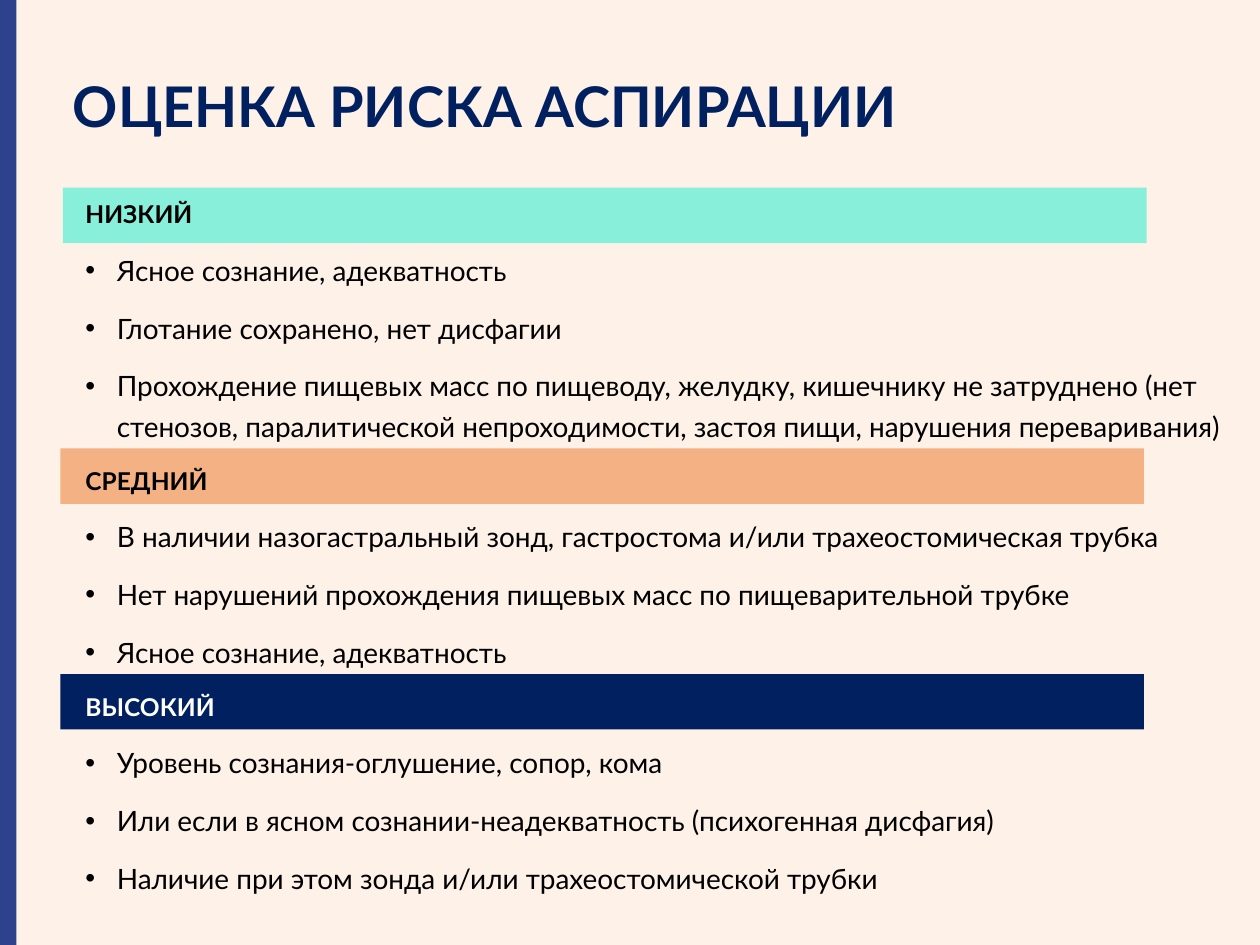
from lxml import etree
from pptx import Presentation
from pptx.dml.color import RGBColor
from pptx.enum.shapes import MSO_SHAPE
from pptx.enum.text import MSO_ANCHOR
from pptx.oxml.ns import qn
from pptx.util import Inches, Pt

RECT = MSO_SHAPE.RECTANGLE
TOP, MIDDLE = MSO_ANCHOR.TOP, MSO_ANCHOR.MIDDLE

CREAM = RGBColor(0xFE, 0xF1, 0xE8)
BLUE = RGBColor(0x2E, 0x41, 0x8D)
NAVY = RGBColor(0x00, 0x20, 0x60)
PEACH = RGBColor(0xF4, 0xB1, 0x83)
MINT = RGBColor(0x87, 0xEF, 0xDA)
BLACK = RGBColor(0x00, 0x00, 0x00)
WHITE = RGBColor(0xFF, 0xFF, 0xFF)
FONT = "Lato"

# Content
TITLE = "ОЦЕНКА РИСКА АСПИРАЦИИ"
# Risk level: heading, text colour, band colour, band left, band top, signs
LEVELS = [
    ("НИЗКИЙ", BLACK, MINT, 0.5, 1.49, [
        "Ясное сознание, адекватность",
        "Глотание сохранено, нет дисфагии",
        "Прохождение пищевых масс по пищеводу, желудку, кишечнику не "
        "затруднено (нет стенозов, паралитической непроходимости, застоя "
        "пищи, нарушения переваривания)",
    ]),
    ("СРЕДНИЙ", BLACK, PEACH, 0.48, 3.56, [
        "В наличии назогастральный зонд, гастростома и/или "
        "трахеостомическая трубка",
        "Нет нарушений прохождения пищевых масс по пищеварительной трубке",
        "Ясное сознание, адекватность",
    ]),
    ("ВЫСОКИЙ", WHITE, NAVY, 0.48, 5.35, [
        "Уровень сознания-оглушение, сопор, кома",
        "Или если в ясном сознании-неадекватность (психогенная дисфагия)",
        "Наличие при этом зонда и/или трахеостомической трубки",
    ]),
]

deck = Presentation()
deck.slide_width, deck.slide_height = Inches(10), Inches(7.5)
slide = deck.slides.add_slide(deck.slide_layouts[6])
slide.background.fill.solid()
slide.background.fill.fore_color.rgb = CREAM


def add_bar(left, top, width, height, color):
    bar = slide.shapes.add_shape(RECT, *map(Inches, (left, top, width, height)))
    bar.shadow.inherit = False
    bar.fill.solid()
    bar.fill.fore_color.rgb = color
    bar.line.fill.background()


def add_box(left, top, width, height, anchor):
    box = slide.shapes.add_textbox(*map(Inches, (left, top, width, height)))
    frame = box.text_frame
    frame.word_wrap = True
    frame.vertical_anchor = anchor
    return frame


def add_run(para, text, size, color, bold):
    run = para.add_run()
    run.text = text
    font = run.font
    font.name, font.size, font.bold = FONT, Pt(size), bold
    font.color.rgb = color


def add_bullet(para):
    props = para._p.get_or_add_pPr()
    props.set("marL", str(Inches(0.25)))
    props.set("indent", str(Inches(-0.25)))
    etree.SubElement(props, qn("a:buFont")).set("typeface", "Arial")
    etree.SubElement(props, qn("a:buChar")).set("char", "•")


# Bands behind the headings
for _, _, band, left, top, _ in LEVELS:
    add_bar(left, top, 8.6, 0.44, band)

# Title
para = add_box(0.48, 0.3, 8.64, 1.13, MIDDLE).paragraphs[0]
para.line_spacing = 0.9
add_run(para, TITLE, 32, NAVY, True)

# Levels and their signs, in one flowing text
body = add_box(0.58, 1.56, 9.5, 5.33, TOP)
for num, (head, color, _, _, _, signs) in enumerate(LEVELS):
    para = body.add_paragraph() if num else body.paragraphs[0]
    para.line_spacing = 1.2 if num else 0.9
    para.space_before = Pt(10)
    add_run(para, head, 14, color, True)
    for sign in signs:
        para = body.add_paragraph()
        para.line_spacing = 1.2
        para.space_before = Pt(10)
        add_bullet(para)
        add_run(para, sign, 16, BLACK, False)

# Left edge stripe
add_bar(0, 0, 0.13, 7.5, BLUE)

deck.save("out.pptx")
